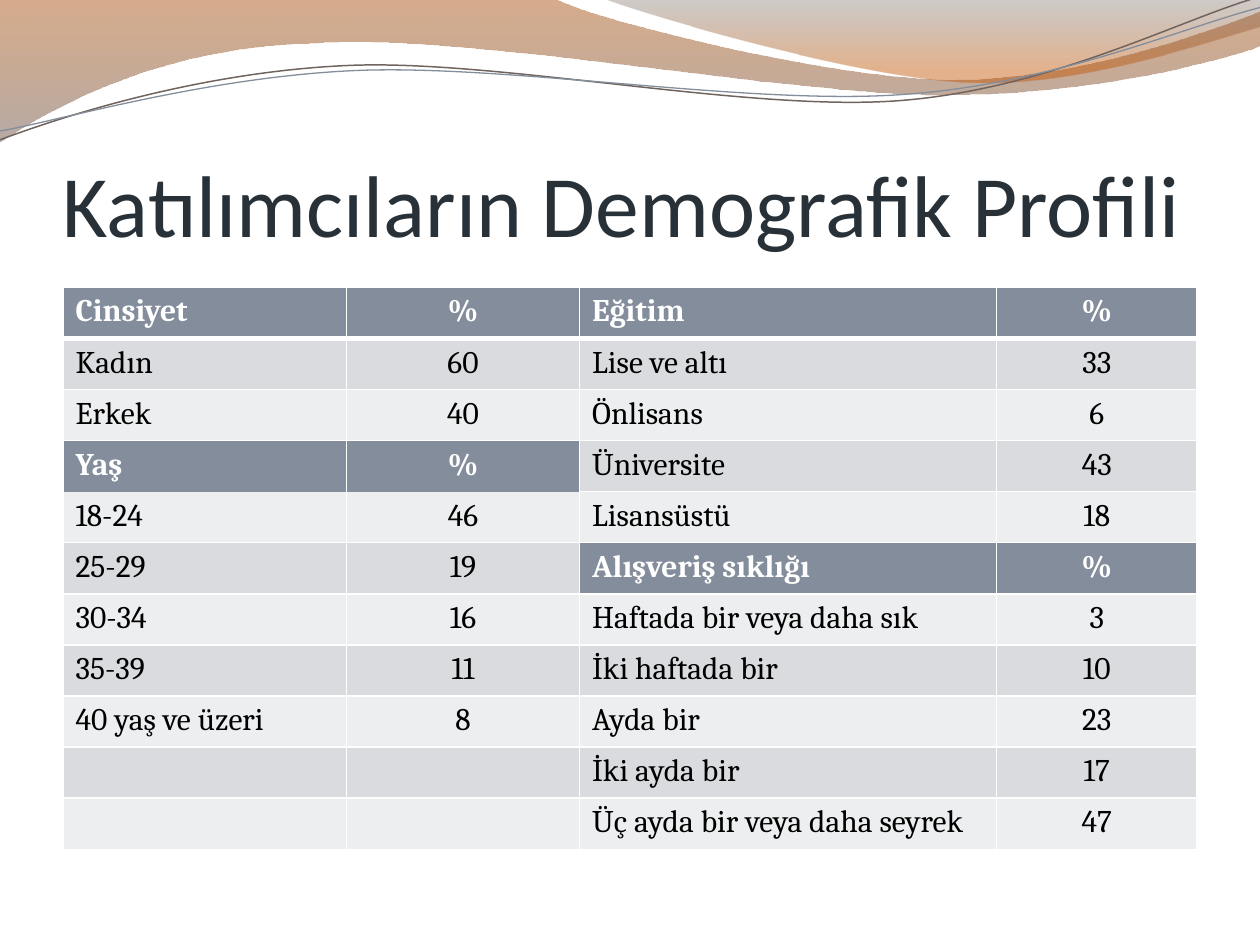
from lxml.etree import Element, SubElement
from pptx import Presentation
from pptx.dml.color import RGBColor
from pptx.enum.text import MSO_ANCHOR, PP_ALIGN
from pptx.oxml.ns import qn
from pptx.util import Inches, Pt

TITLE = "Katılımcıların Demografik Profili"
HEADER, DARK_BAND, LIGHT_BAND, WHITE = "838D9B", "D9DBDE", "EDEEEF", "FFFFFF"

# Each block is (heading, [(answer, percent), ...]); blocks stack down one half
LEFT_BLOCKS = [
    ("Cinsiyet", [("Kadın", 60), ("Erkek", 40)]),
    ("Yaş", [("18-24", 46), ("25-29", 19), ("30-34", 16), ("35-39", 11),
             ("40 yaş ve üzeri", 8)]),
]
RIGHT_BLOCKS = [
    ("Eğitim", [("Lise ve altı", 33), ("Önlisans", 6), ("Üniversite", 43),
                ("Lisansüstü", 18)]),
    ("Alışveriş sıklığı", [("Haftada bir veya daha sık", 3), ("İki haftada bir", 10),
                           ("Ayda bir", 23), ("İki ayda bir", 17),
                           ("Üç ayda bir veya daha seyrek", 47)]),
]
COLUMN_WIDTHS = [2.25, 1.85, 3.31, 1.59]
ROW_COUNT, ROW_HEIGHT = 11, Pt(29.2)

# Wave outlines: a pair is a corner, six numbers are a cubic curve
# Gradient stops: position, colour, opacity percent
WAVE_BANDS = [
    ([(0, 0), (4.4, -0.01), (4.76, 0.17, 6.64, 0.63, 7.58, 0.63),
      (8.53, 0.63, 9.58, 0.26, 10, 0.09), (10.01, 0.36),
      (9.83, 0.44, 8.7, 0.76, 7.46, 0.75), (6.22, 0.75, 3.82, 0.28, 2.57, 0.34),
      (1.29, 0.36, 0.46, 0.83, -0.01, 1.13), (0, 0)],
     [(0, "A44700", 45), (1, "7A655B", 55)]),
    ([(4.79, -0.01), (5.09, 0.11, 6.82, 0.62, 7.69, 0.65),
      (8.56, 0.69, 9.61, 0.32, 10, 0.21), (10, 0), (4.79, -0.01)],
     [(0, "61534C", 30), (0.8, "C45400", 45)]),
]
WAVE_LINES = [
    ([(0, 1.11), (0.48, 0.93, 1.58, 0.57, 2.77, 0.52),
      (3.95, 0.47, 5.93, 0.89, 7.13, 0.8), (8.33, 0.71, 9.38, 0.15, 9.98, -0.02)],
     "71645E", 0.85),
    ([(0, 1.04), (0.47, 0.96, 1.64, 0.61, 2.83, 0.56),
      (4.03, 0.51, 5.97, 0.84, 7.17, 0.75), (8.36, 0.67, 9.41, 0.21, 10, 0.06)],
     "838D9B", 0.75),
]


def color(value):
    return RGBColor.from_string(value)


def add_wave(slide, outline, closed):
    """Draw all points as a freeform, then join each control triple as a curve."""
    points = [(Inches(part[i]), Inches(part[i + 1]))
              for part in outline for i in range(0, len(part), 2)]
    builder = slide.shapes.build_freeform(*points[0])
    builder.add_line_segments(points[1:], close=closed)
    shape = builder.convert_to_shape()
    shape.shadow.inherit = False

    outline_path = next(shape.element.spPr.iter(qn("a:path")))
    segments = iter(outline_path.findall(qn("a:lnTo")))
    for part in outline[1:]:
        group = [next(segments) for _ in range(len(part) // 2)]
        if len(group) == 3:
            curve = Element(qn("a:cubicBezTo"))
            outline_path.replace(group[0], curve)
            for segment in group:
                curve.append(segment[0])
            for segment in group[1:]:
                outline_path.remove(segment)
    return shape


def fill_gradient(shape, stops):
    shape.fill.gradient()
    shape.fill.gradient_angle = 270
    for stop, (position, value, _) in zip(shape.fill.gradient_stops, stops):
        stop.position = position
        stop.color.rgb = color(value)
    for node, (_, _, opacity) in zip(shape.element.spPr.iter(qn("a:srgbClr")), stops):
        SubElement(node, qn("a:alpha"), val=str(opacity * 1000))


def add_run(paragraph, text, font, size, value, bold=False):
    run = paragraph.add_run()
    run.text = text
    run.font.name, run.font.size, run.font.bold = font, Pt(size), bold
    run.font.color.rgb = color(value)


def set_borders(cell, widths):
    properties = cell._tc.get_or_add_tcPr()
    for side in "LRTB":
        width = widths.get(side, 1)
        line = SubElement(properties, qn("a:ln" + side), w=str(Pt(width)))
        if width:
            fill = SubElement(line, qn("a:solidFill"))
            SubElement(fill, qn("a:srgbClr"), val=WHITE)
        else:
            SubElement(line, qn("a:noFill"))


def stack(blocks):
    rows = []
    for heading, answers in blocks:
        rows += [(heading, "%")] + [(answer, str(percent)) for answer, percent in answers]
    return rows + [("", "")] * (ROW_COUNT - len(rows))


presentation = Presentation()
presentation.slide_width, presentation.slide_height = Inches(10), Inches(7.5)
slide = presentation.slides.add_slide(presentation.slide_layouts[6])

# Waves along the top
for outline, stops in WAVE_BANDS:
    band = add_wave(slide, outline, True)
    fill_gradient(band, stops)
    band.line.fill.background()
for outline, value, width in WAVE_LINES:
    curve = add_wave(slide, outline, False)
    curve.fill.background()
    curve.line.color.rgb = color(value)
    curve.line.width = Pt(width)

# Title
title = slide.shapes.add_textbox(Inches(0.5), Inches(0.77), Inches(9), Inches(1.25))
frame = title.text_frame
frame.word_wrap = True
frame.vertical_anchor = MSO_ANCHOR.BOTTOM
frame.margin_left = frame.margin_right = frame.margin_bottom = 0
frame.margin_top = Inches(0.05)
add_run(frame.paragraphs[0], TITLE, "Calibri", 50, "283138")

# Demographic table
table = slide.shapes.add_table(
    ROW_COUNT, len(COLUMN_WIDTHS), Inches(0.5), Inches(2.28),
    Inches(sum(COLUMN_WIDTHS)), ROW_COUNT * ROW_HEIGHT).table
for column, width in zip(table.columns, COLUMN_WIDTHS):
    column.width = Inches(width)
for row in table.rows:
    row.height = ROW_HEIGHT

age_row = 1 + len(LEFT_BLOCKS[0][1])
for half, blocks in enumerate((LEFT_BLOCKS, RIGHT_BLOCKS)):
    for row_index, pair in enumerate(stack(blocks)):
        is_header = pair[1] == "%"
        band = DARK_BAND if row_index % 2 else LIGHT_BAND
        # Thick rule under the top row, none under the age heading
        edges = {0: {"B": 3}, 1: {"T": 3}}.get(row_index, {})
        if half == 0 and row_index in (age_row, age_row + 1):
            edges = {"B": 0} if row_index == age_row else {"T": 0}
        for offset, text in enumerate(pair):
            cell = table.cell(row_index, 2 * half + offset)
            set_borders(cell, edges)
            cell.fill.solid()
            cell.fill.fore_color.rgb = color(HEADER if is_header else band)
            paragraph = cell.text_frame.paragraphs[0]
            paragraph.alignment = PP_ALIGN.CENTER if offset else PP_ALIGN.LEFT
            if text:
                add_run(paragraph, text, "Cambria", 18,
                        WHITE if is_header else "000000", is_header)

presentation.save("out.pptx")
